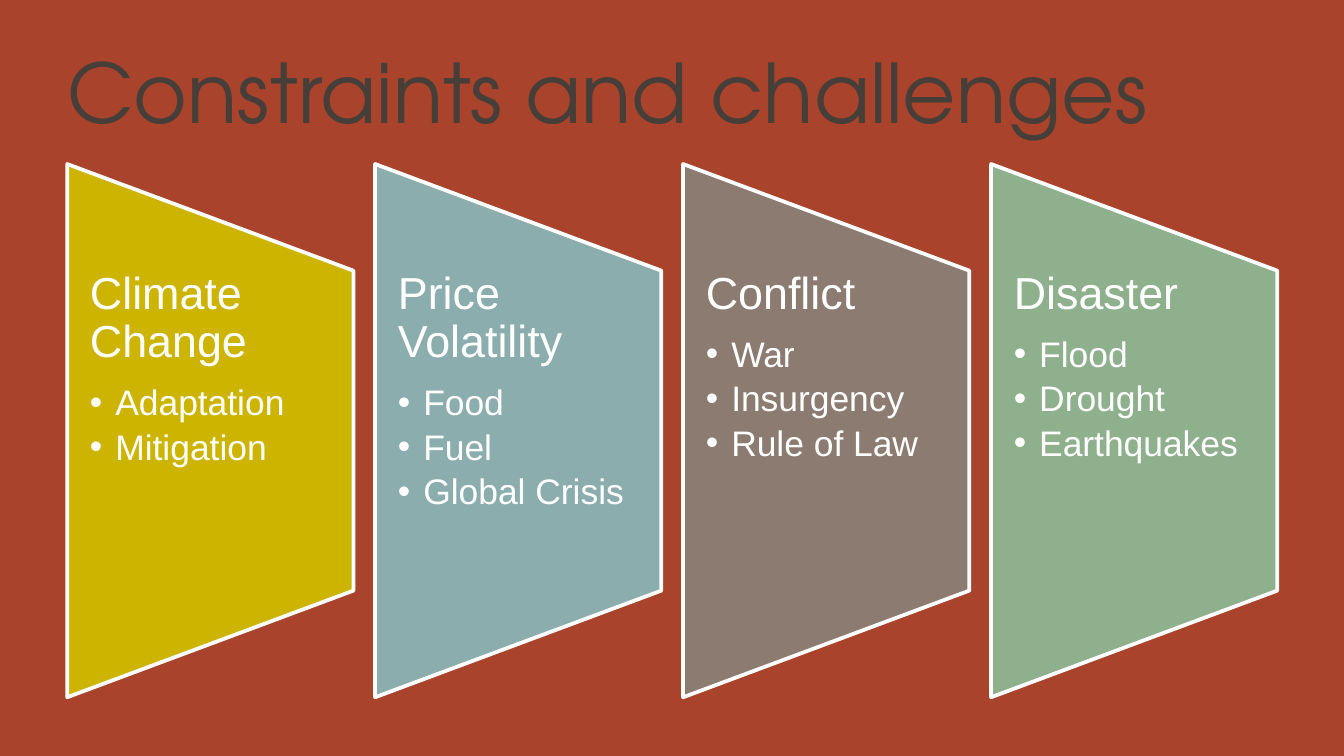
import pptx
import pptx.dml.color
import pptx.enum.shapes
import pptx.enum.text
import pptx.oxml
import pptx.oxml.ns
import pptx.util
from pptx.util import Cm, Pt

COLOURS = {
    "background": "A9432B",
    "title": "463E38",
    "white": "FFFFFF",
    "yellow": "CCB400",
    "teal": "8CADAE",
    "brown": "8C7B70",
    "green": "8FB08C",
}
CHALLENGES = [
    ("Climate Change", ["Adaptation", "Mitigation"], "yellow"),
    ("Price Volatility", ["Food", "Fuel", "Global Crisis"], "teal"),
    ("Conflict", ["War", "Insurgency", "Rule of Law"], "brown"),
    ("Disaster", ["Flood", "Drought", "Earthquakes"], "green"),
]
LEFT, PITCH, PANEL_WIDTH, PANEL_HEIGHT = Cm(1.27), Cm(5.82), Cm(5.41), Cm(10.08)
MIDDLE = Cm(8.14)
COMPARISON_LAYOUT = 4


def colour(name):
    return pptx.dml.color.RGBColor.from_string(COLOURS[name])


def place(box, left, top, width, height):
    box.left, box.top, box.width, box.height = left, top, width, height


def set_frame(box, anchor, side=0, vertical=0):
    frame = box.text_frame
    frame.word_wrap = True
    frame.auto_size = pptx.enum.text.MSO_AUTO_SIZE.NONE
    frame.vertical_anchor = anchor
    frame.margin_left = frame.margin_right = side
    frame.margin_top = frame.margin_bottom = vertical


def set_bullet(para, indent):
    """Hang a round bullet in the indent, or remove the bullet if it is 0."""
    properties = para._p.get_or_add_pPr()
    properties.set("marL", str(indent))
    properties.set("indent", str(-indent))
    tag = 'buChar char="•"' if indent else "buNone"
    properties.append(pptx.oxml.parse_xml(
        f'<a:{tag} {pptx.oxml.ns.nsdecls("a")}/>'))


def write(para, text, size, font="Arial", ink="white", after=0, spacing=1.0, indent=0):
    para.alignment = pptx.enum.text.PP_ALIGN.LEFT
    para.line_spacing = spacing
    para.space_before = Pt(0)
    para.space_after = Pt(after)
    set_bullet(para, indent)
    span = para.add_run()
    span.text = text
    span.font.size = Pt(size)
    span.font.name = font
    span.font.bold = False
    span.font.color.rgb = colour(ink)


def add_panel(page, left, fill):
    """Add a trapezoid turned so that its long side stands on the left."""
    panel = page.shapes.add_shape(
        pptx.enum.shapes.MSO_SHAPE.FLOWCHART_MANUAL_OPERATION,
        left + (PANEL_WIDTH - PANEL_HEIGHT) // 2, MIDDLE - PANEL_WIDTH // 2,
        PANEL_HEIGHT, PANEL_WIDTH)
    panel.rotation = 270
    panel.shadow.inherit = False
    panel.fill.solid()
    panel.fill.fore_color.rgb = colour(fill)
    panel.line.color.rgb = colour("white")
    panel.line.width = Pt(2)


def fill_list(page, box, left, heading, items):
    page.shapes._spTree.append(box._element)  # bring in front of the panel
    place(box, left, Cm(5.11), PANEL_WIDTH, Cm(6.05))
    set_frame(box, pptx.enum.text.MSO_ANCHOR.TOP, side=Cm(0.43))
    write(box.text_frame.paragraphs[0], heading, 24, after=9.7, spacing=0.9)
    for item in items:
        para = box.text_frame.add_paragraph()
        para.level = 1
        write(para, item, 19, after=3.3, spacing=0.9, indent=Cm(0.48))


def fill_title(title):
    place(title, LEFT, Cm(0.38), Cm(22.86), Cm(2.39))
    set_frame(title, pptx.enum.text.MSO_ANCHOR.BOTTOM, vertical=Cm(0.13))
    write(title.text_frame.paragraphs[0], "Constraints and challenges", 44,
          font="TeX Gyre Adventor", ink="title")


def main():
    deck = pptx.Presentation()
    deck.slide_width, deck.slide_height = Cm(25.4), Cm(14.29)
    page = deck.slides.add_slide(deck.slide_layouts[COMPARISON_LAYOUT])
    page.background.fill.solid()
    page.background.fill.fore_color.rgb = colour("background")

    fill_title(page.shapes.title)
    boxes = list(page.placeholders)[1:]
    for column, (box, (heading, items, fill)) in enumerate(zip(boxes, CHALLENGES)):
        left = LEFT + column * PITCH
        add_panel(page, left, fill)
        fill_list(page, box, left, heading, items)
    deck.save("out.pptx")


if __name__ == "__main__":
    main()
